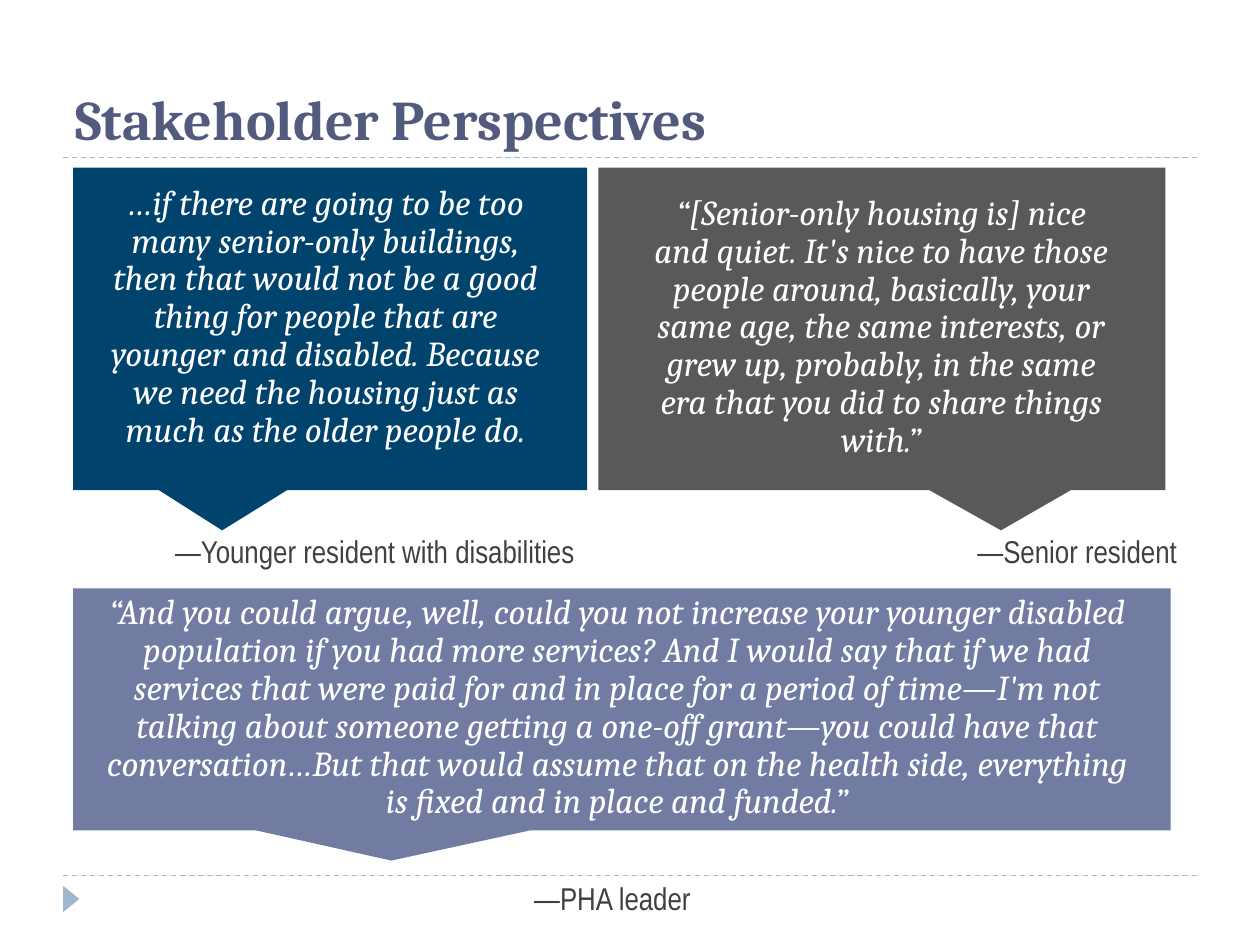
from pptx import Presentation
from pptx.dml.color import RGBColor
from pptx.enum.dml import MSO_LINE
from pptx.enum.shapes import MSO_CONNECTOR, MSO_SHAPE
from pptx.enum.text import MSO_ANCHOR, PP_ALIGN
from pptx.oxml.ns import qn
from pptx.util import Inches, Pt
from lxml import etree

NAVY = RGBColor(0x00, 0x43, 0x6C)
GREY = RGBColor(0x59, 0x59, 0x59)
VIOLET = RGBColor(0x72, 0x7C, 0xA3)
TITLE = RGBColor(0x52, 0x5B, 0x7E)
ACCENT = RGBColor(0x9F, 0xB8, 0xCD)
DARK = RGBColor(0x40, 0x40, 0x40)
WHITE = RGBColor(0xFF, 0xFF, 0xFF)


def add_text(s, text, box, size=18, font="Arial Narrow", color=DARK, bold=False,
             italic=False, align=PP_ALIGN.LEFT, anchor=MSO_ANCHOR.TOP, spacing=None):
    tf = s.shapes.add_textbox(*map(Inches, box)).text_frame
    tf.word_wrap = True
    tf.vertical_anchor = anchor
    p = tf.paragraphs[0]
    p.alignment = align
    p.line_spacing = spacing
    r = p.add_run()
    r.text = text
    r.font.size, r.font.name = Pt(size), font
    r.font.bold, r.font.italic = bold, italic
    r.font.color.rgb = color


def add_filled(s, preset, box, color):
    sp = s.shapes.add_shape(preset, *map(Inches, box))
    sp.shadow.inherit = False
    sp.fill.solid()
    sp.fill.fore_color.rgb = color
    sp.line.fill.background()
    return sp


def add_frame(s, left, right, top, bottom):
    # Dashed rules and the footer marker
    for y in (top, bottom):
        line = s.shapes.add_connector(MSO_CONNECTOR.STRAIGHT, Inches(left), Inches(y),
                                      Inches(right), Inches(y))
        line.line.color.rgb = ACCENT
        line.line.width = Pt(0.75)
        line.line.dash_style = MSO_LINE.DASH
        etree.SubElement(line._element.spPr, qn("a:effectLst"))
    marker = add_filled(s, MSO_SHAPE.ISOSCELES_TRIANGLE,
                        (left - 0.04, bottom + 0.12, 0.21, 0.13), ACCENT)
    marker.rotation = 90


def add_quote(s, box, color, quote, quote_box, speaker, speaker_box, tail=-0.21):
    # Callout, its quotation and the speaker below
    callout = add_filled(s, MSO_SHAPE.RECTANGULAR_CALLOUT, box, color)
    callout.adjustments[0] = tail
    callout.adjustments[1] = 0.625
    add_text(s, quote, quote_box, size=20, font="Cambria", color=WHITE, italic=True,
             align=PP_ALIGN.CENTER, spacing=0.9)
    add_text(s, speaker, speaker_box, align=PP_ALIGN.RIGHT)


def main():
    prs = Presentation()
    prs.slide_width, prs.slide_height = Inches(10), Inches(7.5)
    s = prs.slides.add_slide(prs.slide_layouts[6])

    add_frame(s, 0.5, 9.5, 1.25, 6.95)
    add_text(s, "Stakeholder Perspectives", (0.5, 0.17, 9, 1.08), size=32, font="Cambria",
             color=TITLE, bold=True, anchor=MSO_ANCHOR.BOTTOM)

    # Residents, side by side
    add_quote(s, (0.58, 1.33, 4.08, 2.56), NAVY,
              "…if there are going to be too many senior-only buildings, then that would "
              "not be a good thing for people that are younger and disabled. Because we "
              "need the housing just as much as the older people do.",
              (0.67, 1.42, 3.83, 2.22),
              "—Younger resident with disabilities", (0.58, 4.17, 4.08, 0.4))
    add_quote(s, (4.75, 1.33, 4.5, 2.56), GREY,
              "“[Senior-only housing is] nice and quiet. It's nice to have those people "
              "around, basically, your same age, the same interests, or grew up, probably, "
              "in the same era that you did to share things with.”",
              (5.08, 1.5, 3.83, 2.22),
              "—Senior resident", (4.5, 4.17, 4.94, 0.4), tail=0.21)

    # Agency leader, full width
    add_quote(s, (0.58, 4.67, 8.71, 1.92), VIOLET,
              "“And you could argue, well, could you not increase your younger disabled "
              "population if you had more services? And I would say that if we had services "
              "that were paid for and in place for a period of time—I'm not talking about "
              "someone getting a one-off grant—you could have that conversation…But that "
              "would assume that on the health side, everything is fixed and in place and "
              "funded.”",
              (0.71, 4.67, 8.38, 1.92),
              "—PHA leader", (1.5, 6.93, 4.08, 0.4))

    prs.save("out.pptx")


if __name__ == "__main__":
    main()
